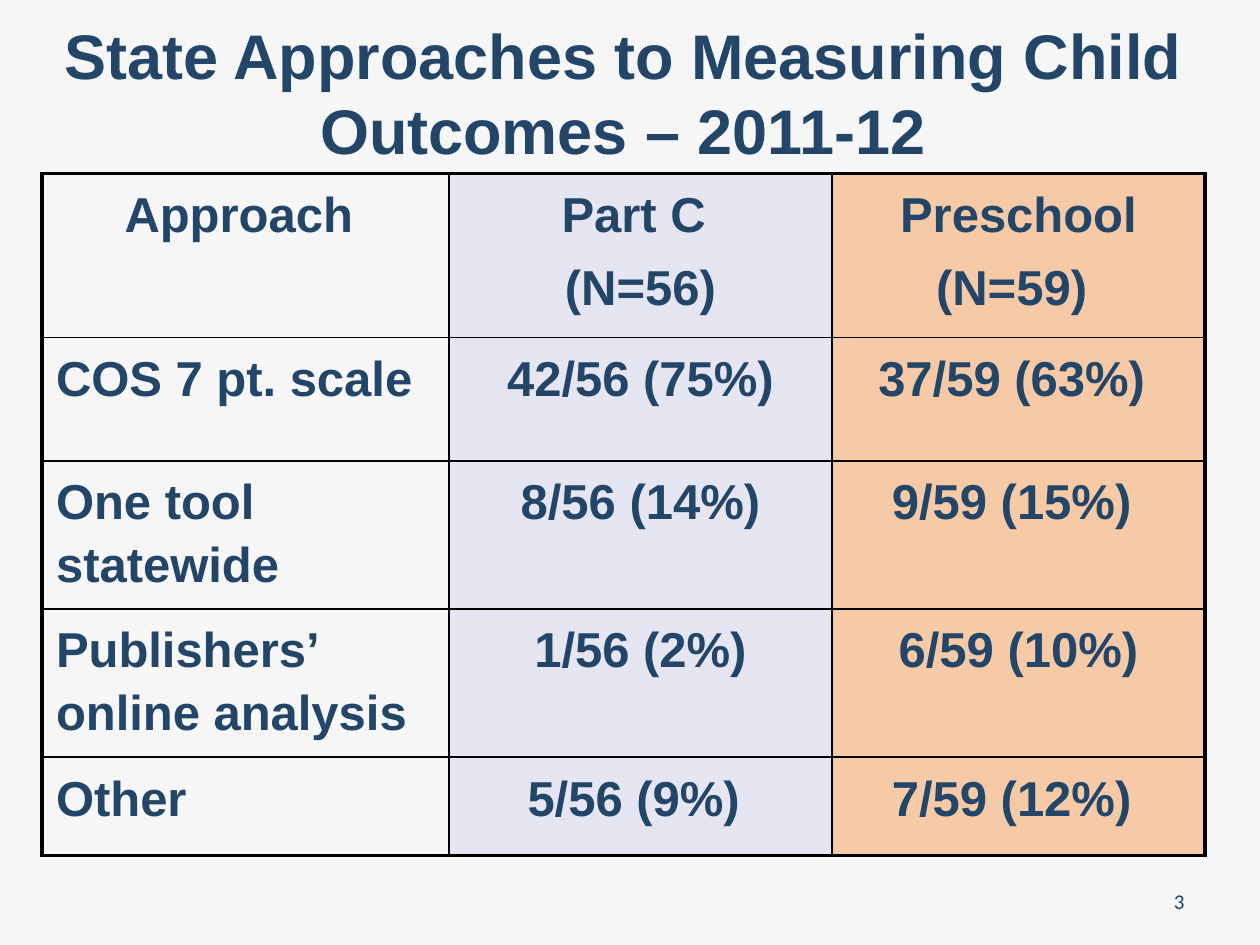
from dataclasses import dataclass

from lxml.etree import SubElement
from pptx import Presentation
from pptx.dml.color import RGBColor
from pptx.enum.text import MSO_ANCHOR, PP_ALIGN
from pptx.oxml.ns import qn
from pptx.util import Cm, Pt


@dataclass(frozen=True)
class Theme:
    background: str = "F6F6F6"
    ink: str = "224568"
    border: str = "000000"
    column_tints: tuple = (None, ("CECEEF", 38), ("F79646", 45))
    font: str = "Arial"
    number_font: str = "Calibri"
    title_size: float = 36
    table_size: float = 28
    number_size: float = 12
    outer_line: float = 2.25
    inner_line: float = 1


THEME = Theme()
COLUMN_WIDTHS = (8.2, 7.72, 7.52)
ROW_HEIGHTS = (3.3, 2.49, 2.49, 2.49, 1.98)
APPROACHES = (
    (("Approach ",), ("Part C ", "(N=56)"), ("Preschool", "(N=59) ")),
    (("COS 7 pt. scale",), ("42/56 (75%)",), ("37/59 (63%) ",)),
    (("One tool statewide",), ("8/56 (14%)",), ("9/59 (15%) ",)),
    (("Publishers’ online analysis",), ("1/56 (2%)",), ("6/59 (10%)",)),
    (("Other",), ("5/56 (9%) ",), ("7/59 (12%) ",)),
)


def add_run(paragraph, text, size, font=THEME.font, bold=True):
    run = paragraph.add_run()
    run.text = text
    run.font.name = font
    run.font.size = Pt(size)
    run.font.bold = bold
    run.font.color.rgb = RGBColor.from_string(THEME.ink)


def add_line_of_text(slide, box, text, align, size, font, bold):
    """Add a vertically centred text box with one paragraph."""
    frame = slide.shapes.add_textbox(*map(Cm, box)).text_frame
    frame.word_wrap = True
    frame.vertical_anchor = MSO_ANCHOR.MIDDLE
    paragraph = frame.paragraphs[0]
    paragraph.alignment = align
    add_run(paragraph, text, size, font, bold)


def add_title(slide, box, text):
    add_line_of_text(slide, box, text, PP_ALIGN.CENTER,
                     THEME.title_size, THEME.font, True)


def add_slide_number(slide, box, number):
    add_line_of_text(slide, box, number, PP_ALIGN.RIGHT,
                     THEME.number_size, THEME.number_font, False)


def set_borders(cell, outer_sides):
    """Draw all four sides, heavier on those at the table's edge."""
    properties = cell._tc.get_or_add_tcPr()
    for side in "LRTB":
        width = THEME.outer_line if side in outer_sides else THEME.inner_line
        line = SubElement(properties, qn(f"a:ln{side}"), w=str(Pt(width)))
        fill = SubElement(line, qn("a:solidFill"))
        SubElement(fill, qn("a:srgbClr"), val=THEME.border)


def tint_cell(cell, tint):
    if tint is None:
        cell.fill.background()
        return
    color, opacity = tint
    cell.fill.solid()
    cell.fill.fore_color.rgb = RGBColor.from_string(color)
    srgb = cell._tc.tcPr.find(f"{qn('a:solidFill')}/{qn('a:srgbClr')}")
    SubElement(srgb, qn("a:alpha"), val=str(opacity * 1000))


def write_cell(cell, lines, align):
    cell.margin_left = cell.margin_right = Cm(0.28)
    cell.margin_top = cell.margin_bottom = Cm(0.13)
    frame = cell.text_frame
    for index, text in enumerate(lines):
        paragraph = frame.add_paragraph() if index else frame.paragraphs[0]
        paragraph.alignment = align
        paragraph.line_spacing = 1.15
        if index:
            paragraph.space_before = Pt(5.8)
        add_run(paragraph, text, THEME.table_size)


def add_approach_table(slide, left, top):
    row_count, column_count = len(ROW_HEIGHTS), len(COLUMN_WIDTHS)
    table = slide.shapes.add_table(
        row_count, column_count, Cm(left), Cm(top),
        Cm(sum(COLUMN_WIDTHS)), Cm(sum(ROW_HEIGHTS))).table
    table.first_row = table.horz_banding = False
    for column, width in zip(table.columns, COLUMN_WIDTHS):
        column.width = Cm(width)
    for row, height in zip(table.rows, ROW_HEIGHTS):
        row.height = Cm(height)
    for r, approach in enumerate(APPROACHES):
        for c, lines in enumerate(approach):
            cell = table.cell(r, c)
            edges = {"L": c == 0, "R": c == column_count - 1,
                     "T": r == 0, "B": r == row_count - 1}
            set_borders(cell, [side for side, outer in edges.items() if outer])
            tint_cell(cell, THEME.column_tints[c])
            is_label = c == 0 and r > 0
            write_cell(cell, lines,
                       PP_ALIGN.LEFT if is_label else PP_ALIGN.CENTER)


def main():
    presentation = Presentation()
    presentation.slide_width, presentation.slide_height = Cm(25.4), Cm(19.05)
    slide = presentation.slides.add_slide(presentation.slide_layouts[6])
    slide.background.fill.solid()
    slide.background.fill.fore_color.rgb = RGBColor.from_string(THEME.background)
    add_slide_number(slide, (18.2, 17.66, 5.93, 1.01), "3")
    add_approach_table(slide, 0.85, 3.5)
    add_title(slide, (0.84, 0.21, 23.44, 3.28),
              "State Approaches to Measuring Child Outcomes – 2011-12")
    presentation.save("out.pptx")


if __name__ == "__main__":
    main()
